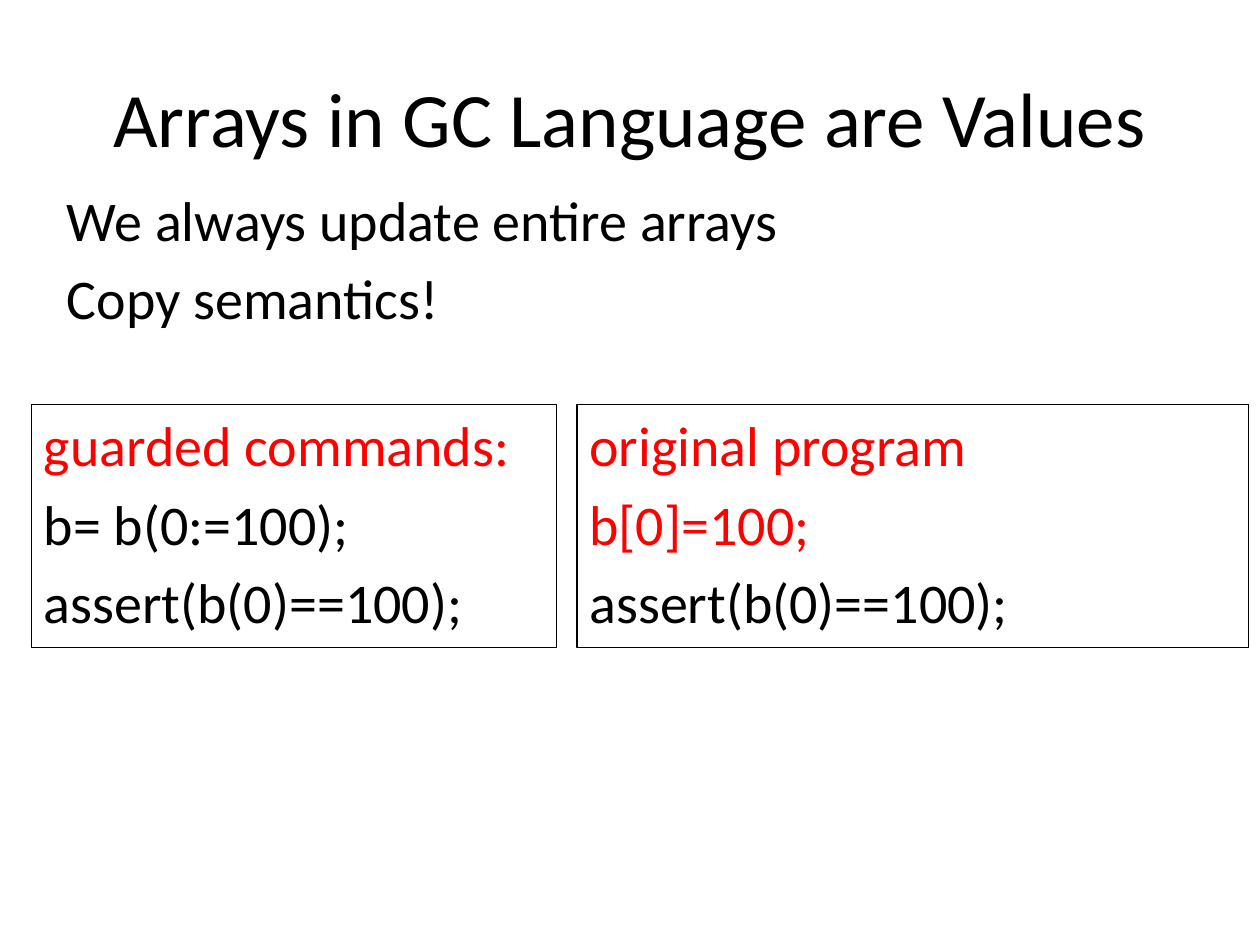
from pptx import Presentation
from pptx.dml.color import RGBColor
from pptx.enum.shapes import MSO_SHAPE as Shape
from pptx.enum.text import MSO_ANCHOR as Anchor, MSO_AUTO_SIZE as AutoSize, PP_ALIGN as Align
from pptx.oxml.ns import qn
from pptx.util import Inches, Pt
from lxml.etree import SubElement

BLACK = RGBColor(0, 0, 0)
RED = RGBColor(255, 0, 0)
FONT = "Calibri"

TITLE = [("Arrays in GC Language are Values", BLACK)]
POINTS = [("We always update entire arrays", BLACK), ("Copy semantics!", BLACK)]
PANELS = [
    (4.17, [("guarded commands:", RED), ("b= b(0:=100);", BLACK), ("assert(b(0)==100);", BLACK)]),
    (5.33, [("original program", RED), ("b[0]=100;", RED), ("assert(b(0)==100);", BLACK)]),
]
PANEL_LEFT, PANEL_TOP, PANEL_HEIGHT, PANEL_GAP = 0.25, 3.21, 1.93, 0.16


def place(box, left, top, width, height):
    box.left, box.top, box.width, box.height = map(Inches, (left, top, width, height))


def write(box, lines, size, align, anchor, space=0):
    frame = box.text_frame
    frame.text = "\n".join(text for text, color in lines)
    frame.word_wrap = True
    frame.auto_size = AutoSize.NONE
    frame.vertical_anchor = anchor
    for para, (text, color) in zip(frame.paragraphs, lines):
        para.alignment = align
        para.space_before = Pt(space)
        for span in para.runs:
            span.font.name = FONT
            span.font.size = Pt(size)
            span.font.color.rgb = color


def remove_bullets(box):
    for para in box.text_frame.paragraphs:
        properties = para._p.get_or_add_pPr()
        properties.set("marL", "0")
        properties.set("indent", "0")
        SubElement(properties, qn("a:buNone"))


def add_panel(page, left, width, lines):
    box = page.shapes.add_shape(Shape.RECTANGLE, 0, 0, 0, 0)
    place(box, left, PANEL_TOP, width, PANEL_HEIGHT)
    box.shadow.inherit = False
    box.fill.background()
    box.line.color.rgb = BLACK
    box.line.width = Pt(0.75)
    write(box, lines, 32, Align.LEFT, Anchor.TOP, 6.4)
    box.text_frame.auto_size = AutoSize.SHAPE_TO_FIT_TEXT


def main():
    deck = Presentation()
    deck.slide_width, deck.slide_height = Inches(10), Inches(7.5)
    page = deck.slides.add_slide(deck.slide_layouts[1])

    title, body = page.placeholders
    place(title, 0.5, 0.3, 9, 1.25)
    write(title, TITLE, 44, Align.CENTER, Anchor.MIDDLE)
    place(body, 0.43, 1.42, 8.82, 1.25)
    write(body, POINTS, 32, Align.LEFT, Anchor.TOP, 6.4)
    remove_bullets(body)

    left = PANEL_LEFT
    for width, lines in PANELS:
        add_panel(page, left, width, lines)
        left += width + PANEL_GAP

    deck.save("out.pptx")


if __name__ == "__main__":
    main()
